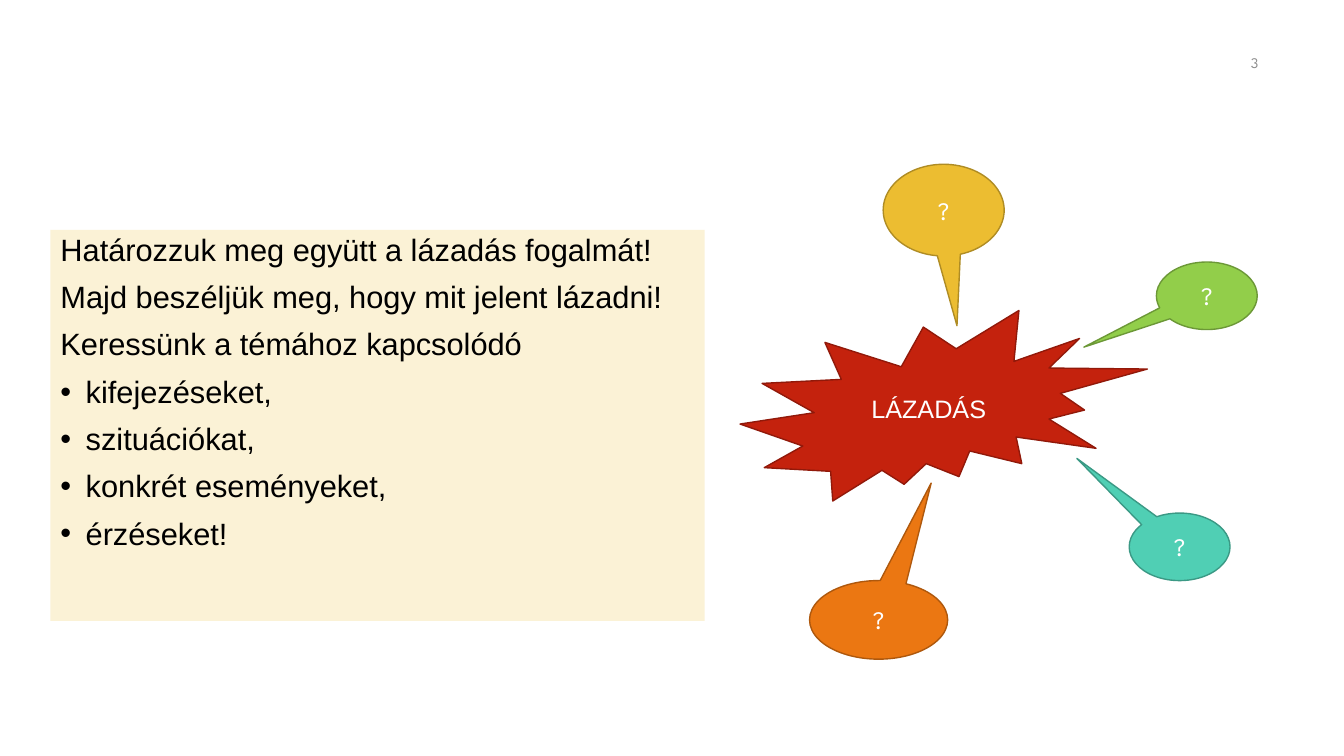
"""Build a slide that gathers ideas around the word LÁZADÁS."""
from lxml import etree
from pptx import Presentation
from pptx.dml.color import RGBColor
from pptx.enum import shapes, text
from pptx.oxml.ns import qn
from pptx.util import Inches, Pt

COLORS = {
    "cream": "FBF2D6", "black": "000000", "white": "FFFFFF", "gray": "8C8C8C",
    "yellow": "ECBD31", "dark yellow": "AF8C24",
    "green": "92CE4A", "dark green": "6C9837",
    "orange": "EB7712", "dark orange": "AE580D",
    "teal": "50CFB4", "dark teal": "3B9985",
    "red": "C4220D", "dark red": "91190A",
}
TASKS = [
    "Határozzuk meg együtt a lázadás fogalmát!",
    "Majd beszéljük meg, hogy mit jelent lázadni!",
    "Keressünk a témához kapcsolódó",
]
TOPICS = ["kifejezéseket,", "szituációkat,", "konkrét eseményeket,", "érzéseket!"]
CALLOUT = shapes.MSO_SHAPE.OVAL_CALLOUT
BURST = shapes.MSO_SHAPE.EXPLOSION2
IDEAS = [
    (CALLOUT, "?", "League Spartan", "yellow", (8.76, 1.63, 1.2, 0.91), (0.11, 1.26)),
    (CALLOUT, "?", "League Spartan", "green", (11.47, 2.6, 1, 0.67), (-1.22, 0.76)),
    (CALLOUT, "?", "League Spartan", "orange", (8.03, 5.76, 1.37, 0.78), (0.38, -1.74)),
    (CALLOUT, "?", "League Spartan", "teal", (11.2, 5.09, 1, 0.67), (-1.02, -1.31)),
    (BURST, "LÁZADÁS", "Arial", "red", (7.34, 3.08, 4.04, 1.89), ()),
]


def color(name):
    return RGBColor.from_string(COLORS[name])


def write(para, words, font, size, ink, align):
    para.text = words
    para.alignment = align
    para.font.name = font
    para.font.size = Pt(size)
    para.font.color.rgb = color(ink)


deck = Presentation()
deck.slide_width, deck.slide_height = Inches(13.33), Inches(7.5)
page = deck.slides.add_slide(deck.slide_layouts[1])
title = page.shapes.title.element
title.getparent().remove(title)

body = page.placeholders[1]
body.left, body.top, body.width, body.height = map(Inches, (0.5, 2.28, 6.49, 3.88))
body.fill.solid()
body.fill.fore_color.rgb = color("cream")
frame = body.text_frame
frame.auto_size = text.MSO_AUTO_SIZE.NONE
frame.vertical_anchor = text.MSO_ANCHOR.TOP
for index, words in enumerate(TASKS + TOPICS):
    para = frame.paragraphs[0] if index == 0 else frame.add_paragraph()
    para.line_spacing = 0.9
    para.space_before = Pt(10 if index else 0)
    props = para._p.get_or_add_pPr()
    bulleted = words in TOPICS
    indent = Inches(0.25 if bulleted else 0)
    props.set("marL", str(indent))
    props.set("indent", str(-indent))
    if bulleted:
        etree.SubElement(props, qn("a:buFont"), typeface="Arial")
        etree.SubElement(props, qn("a:buChar"), char="•")
    else:
        etree.SubElement(props, qn("a:buNone"))
    write(para, words, "Arial", 22, "black", text.PP_ALIGN.LEFT)

number = page.shapes.add_textbox(*map(Inches, (9.58, 0.42, 3, 0.4))).text_frame
number.word_wrap = True
number.vertical_anchor = text.MSO_ANCHOR.MIDDLE
write(number.paragraphs[0], "3", "League Spartan", 10.5, "gray", text.PP_ALIGN.RIGHT)

for kind, words, font, hue, place, pointer in IDEAS:
    idea = page.shapes.add_shape(kind, *map(Inches, place))
    for index, value in enumerate(pointer):
        idea.adjustments[index] = value
    idea.shadow.inherit = False
    idea.fill.solid()
    idea.fill.fore_color.rgb = color(hue)
    idea.line.color.rgb = color("dark " + hue)
    idea.line.width = Pt(1)
    idea.text_frame.vertical_anchor = text.MSO_ANCHOR.MIDDLE
    write(idea.text_frame.paragraphs[0], words, font, 18, "white", text.PP_ALIGN.CENTER)

deck.save("out.pptx")
